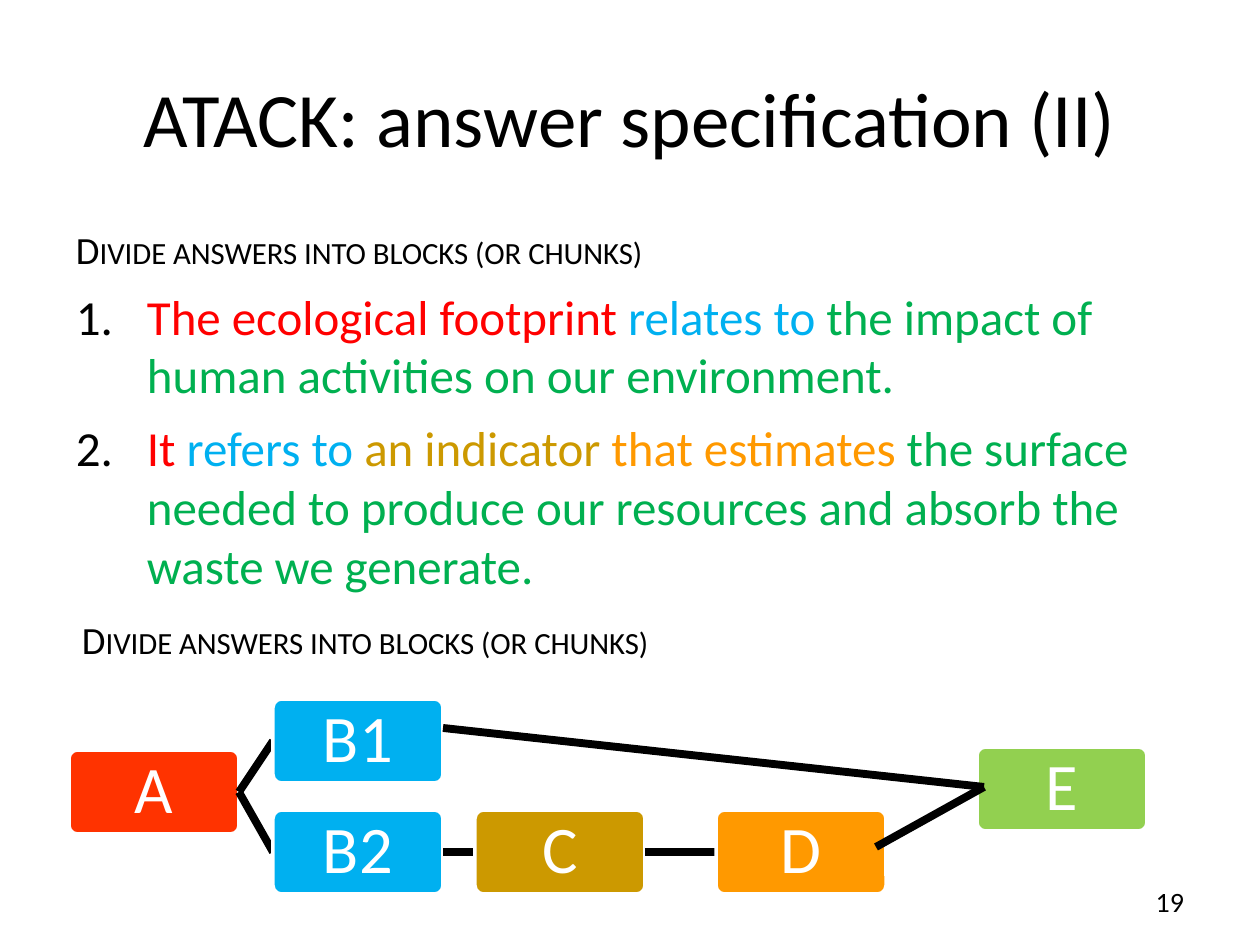
"""Build the answer specification slide with its block diagram."""
from dataclasses import dataclass
from typing import Any, NamedTuple

from lxml import etree
from pptx import Presentation
from pptx.dml.color import RGBColor
from pptx.enum.shapes import MSO_CONNECTOR, MSO_SHAPE
from pptx.enum.text import MSO_ANCHOR, PP_ALIGN
from pptx.oxml.ns import qn
from pptx.util import Emu, Pt

LEFT, CENTER, RIGHT = PP_ALIGN.LEFT, PP_ALIGN.CENTER, PP_ALIGN.RIGHT
TOP, MIDDLE = MSO_ANCHOR.TOP, MSO_ANCHOR.MIDDLE
STRAIGHT = MSO_CONNECTOR.STRAIGHT
ROUNDED = MSO_SHAPE.ROUNDED_RECTANGLE
PX_PER_INCH = 126
BLOCK_WIDTH, BLOCK_HEIGHT = 170, 84
HANGING = 71


@dataclass(frozen=True)
class Theme:
    """Colours, font and type sizes of the slide."""
    font: str = "Calibri"
    black: str = "000000"
    white: str = "FFFFFF"
    red: str = "FF0000"
    blue: str = "00B0F0"
    green: str = "00B050"
    gold: str = "CC9900"
    orange: str = "FF9900"
    scarlet: str = "FF3300"
    lime: str = "92D050"
    title: int = 44
    block: int = 38
    body: int = 28
    heading: int = 22
    number: int = 16


class Area(NamedTuple):
    """A rectangle in px."""
    left: int
    top: int
    width: int
    height: int


class Span(NamedTuple):
    """A stretch of text in one format."""
    text: str
    size: int
    color: str
    caps: bool = False


class Block(NamedTuple):
    """A diagram block, joined to the block it follows."""
    label: str
    left: int
    top: int
    color: str
    source: str = ""


class Point(NamedTuple):
    """A position in px."""
    x: int
    y: int


THEME = Theme()
HEADING = [Span("Divide answers into blocks (or chunks)", THEME.heading, THEME.black, True)]
SENTENCES = [
    [("The ecological footprint ", THEME.red), ("relates to ", THEME.blue),
     ("the impact of human activities on our environment.", THEME.green)],
    [("It ", THEME.red), ("refers to ", THEME.blue), ("an indicator ", THEME.gold),
     ("that estimates ", THEME.orange),
     ("the surface needed to produce our resources and absorb the waste we generate.",
      THEME.green)],
]
BLOCKS = [
    Block("A", 69, 750, THEME.scarlet),
    Block("B1", 273, 699, THEME.blue, "A"),
    Block("B2", 273, 810, THEME.blue, "A"),
    Block("C", 475, 810, THEME.gold, "B2"),
    Block("D", 716, 810, THEME.orange, "C"),
    Block("E", 977, 747, THEME.lime),
]
MEETING = Point(984, 787)
MEETING_STARTS = [Point(443, 728), Point(876, 847)]


def px(value: int) -> Emu:
    """Turn px into EMU."""
    return Emu(round(value * 914400 / PX_PER_INCH))


def apply(target: Any, values: dict[str, Any]) -> None:
    """Set each attribute in a dict of format values."""
    for name, value in values.items():
        setattr(target, name, value)


def place(shape: Any, area: Area) -> None:
    """Move a shape to an area."""
    apply(shape, {name: px(value) for name, value in area._asdict().items()})


def format_frame(frame: Any, anchor: MSO_ANCHOR, side: int = 13, edge: int = 6) -> None:
    """Set the wrapping, anchor and margins of a text frame."""
    apply(frame, {"word_wrap": True, "vertical_anchor": anchor,
                  "margin_left": px(side), "margin_right": px(side),
                  "margin_top": px(edge), "margin_bottom": px(edge)})


def write(para: Any, spans: list[Span], **values: Any) -> None:
    """Write spans into a paragraph with the given paragraph format."""
    apply(para, values)
    for span in spans:
        run = para.add_run()
        run.text = span.text
        apply(run.font, {"name": THEME.font, "size": Pt(span.size)})
        run.font.color.rgb = RGBColor.from_string(span.color)
        if span.caps:
            run.font._element.set("cap", "small")


def number(para: Any) -> None:
    """Give a paragraph a black automatic number and a hanging indent."""
    properties = para._p.get_or_add_pPr()
    properties.set("marL", str(px(HANGING)))
    properties.set("indent", str(-px(HANGING)))
    color = etree.SubElement(properties, qn("a:buClr"))
    etree.SubElement(color, qn("a:srgbClr"), val=THEME.black)
    etree.SubElement(properties, qn("a:buFont"), typeface="+mj-lt")
    etree.SubElement(properties, qn("a:buAutoNum"), type="arabicPeriod")


def add_text(page: Any, area: Area, spans: list[Span], align: PP_ALIGN = LEFT,
             anchor: MSO_ANCHOR = TOP) -> Any:
    """Add a text box with one paragraph and return its frame."""
    box = page.shapes.add_textbox(0, 0, 0, 0)
    place(box, area)
    format_frame(box.text_frame, anchor)
    write(box.text_frame.paragraphs[0], spans, alignment=align)
    return box.text_frame


def add_line(page: Any, start: Point, end: Point) -> None:
    """Draw a thick black line between two points."""
    line = page.shapes.add_connector(STRAIGHT, *map(px, (*start, *end)))
    line.line.width = Pt(4.5)
    line.line.color.rgb = RGBColor.from_string(THEME.black)
    etree.SubElement(line._element.spPr, qn("a:effectLst"))


def add_block(page: Any, block: Block) -> None:
    """Draw a rounded block with its label."""
    shape = page.shapes.add_shape(ROUNDED, 0, 0, 0, 0)
    place(shape, Area(block.left, block.top, BLOCK_WIDTH, BLOCK_HEIGHT))
    shape.adjustments[0] = 0.1
    shape.shadow.inherit = False
    shape.fill.solid()
    shape.fill.fore_color.rgb = RGBColor.from_string(block.color)
    shape.line.width = Pt(2)
    shape.line.color.rgb = RGBColor.from_string(THEME.white)
    format_frame(shape.text_frame, MIDDLE, 4, 4)
    write(shape.text_frame.paragraphs[0], [Span(block.label, THEME.block, THEME.white)],
          alignment=CENTER, line_spacing=0.9)


def add_diagram(page: Any) -> None:
    """Draw the blocks and the lines that join them."""
    named = {block.label: block for block in BLOCKS}
    middle = BLOCK_HEIGHT // 2
    for block in BLOCKS:
        if block.source:
            source = named[block.source]
            add_line(page, Point(source.left + BLOCK_WIDTH, source.top + middle),
                     Point(block.left, block.top + middle))
        add_block(page, block)
    for start in MEETING_STARTS:
        add_line(page, start, MEETING)


def main() -> None:
    """Build and save the deck."""
    deck = Presentation()
    apply(deck, {"slide_width": px(1260), "slide_height": px(945)})
    page = deck.slides.add_slide(deck.slide_layouts[5])
    title = page.shapes.title
    place(title, Area(63, 18, 1134, 198))
    format_frame(title.text_frame, MIDDLE)
    write(title.text_frame.paragraphs[0],
          [Span("ATACK: answer specification (II)", THEME.title, THEME.black)],
          alignment=CENTER)
    body = add_text(page, Area(63, 220, 1134, 381), HEADING)
    for sentence in SENTENCES:
        para = body.add_paragraph()
        write(para, [Span(text, THEME.body, color) for text, color in sentence],
              space_before=Pt(8))
        number(para)
    add_text(page, Area(903, 876, 294, 50), [Span("19", THEME.number, THEME.black)],
             RIGHT, MIDDLE)
    add_diagram(page)
    add_text(page, Area(69, 610, 1033, 59), HEADING)
    deck.save("out.pptx")


if __name__ == "__main__":
    main()
